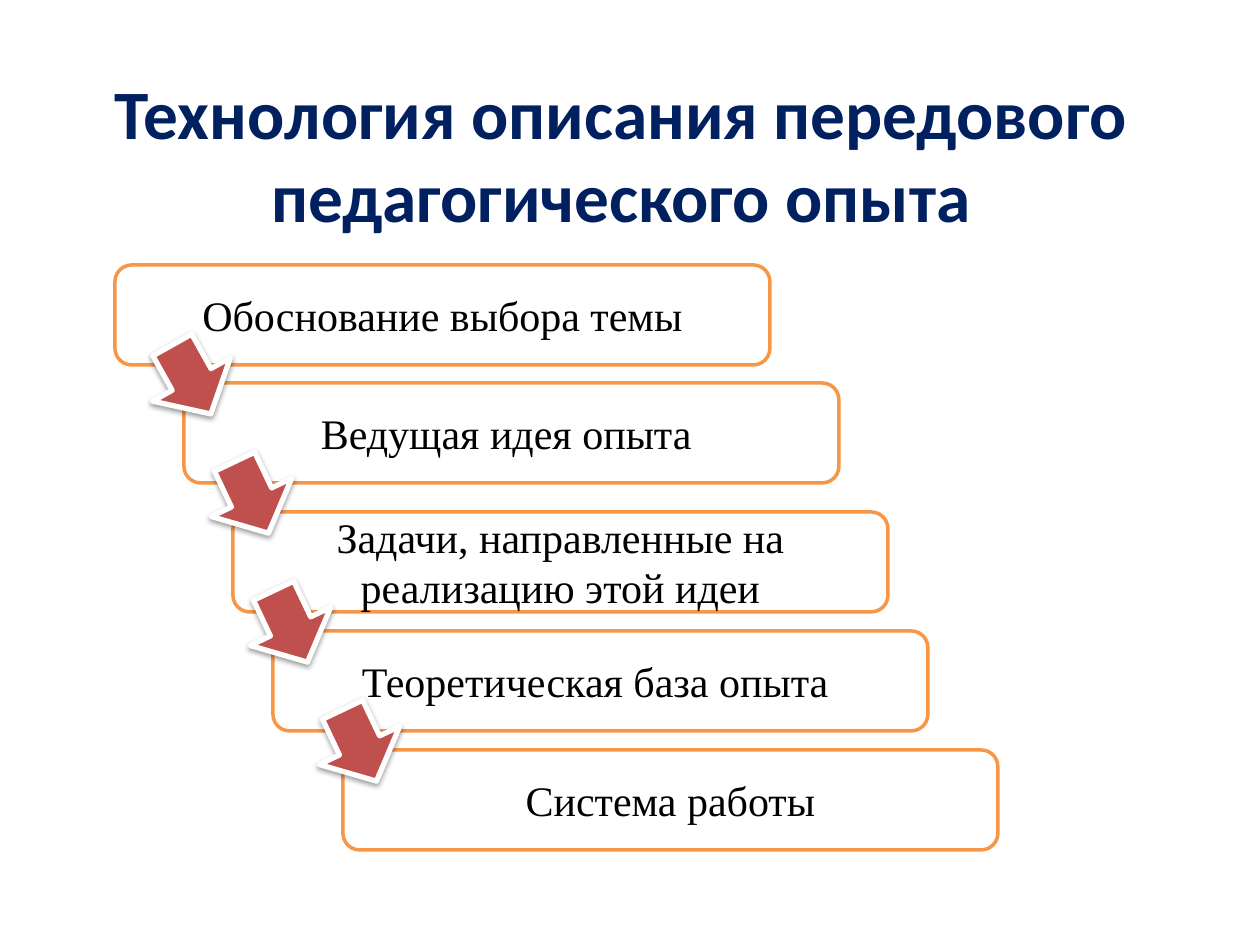
from lxml.etree import SubElement as Sub
from pptx import Presentation
from pptx.dml.color import RGBColor
from pptx.enum.shapes import MSO_SHAPE as Kind
from pptx.enum.text import MSO_ANCHOR as Anchor, MSO_AUTO_SIZE as Fit, PP_ALIGN as Align
from pptx.oxml.ns import qn
from pptx.util import Pt

PX = 914400 // 126
NAVY = RGBColor(0x00, 0x20, 0x60)
ORANGE = RGBColor(0xF7, 0x96, 0x46)
RED = RGBColor(0xC0, 0x50, 0x4D)
WHITE = RGBColor(0xFF, 0xFF, 0xFF)
BLACK = RGBColor(0x00, 0x00, 0x00)

HEAD = "Технология описания передового педагогического опыта"
HEAD_FONT = {"name": "Calibri", "size": Pt(39.6), "bold": True}
STEP_FONT = {"name": "Times New Roman", "size": Pt(24), "bold": False}
STEPS = [
    ("Обоснование выбора темы", 115, 265),
    ("Ведущая идея опыта ", 184, 383),
    ("Задачи, направленные на реализацию этой идеи", 233, 512),
    ("Теоретическая база опыта ", 273, 631),
    ("Система работы", 343, 750),
]
STEP_SIZE = 655, 100
ARROW_SIZE = 79, 89
ARROW_DROP = 70
ARROWS = [(152, 60.8), (212, 64.6), (251, 64.6), (320, 64.6)]


def scale(*sizes):
    return [size * PX for size in sizes]


def write(shape, text, style, color):
    frame = shape.text_frame
    frame.word_wrap = True
    frame.auto_size = Fit.NONE
    frame.vertical_anchor = Anchor.MIDDLE
    para = frame.paragraphs[0]
    para.alignment = Align.CENTER
    run = para.add_run()
    run.text = text
    for key, value in style.items():
        setattr(run.font, key, value)
    run.font.color.rgb = color


def add_title(slide):
    title = slide.shapes.title
    title.left, title.top, title.width, title.height = scale(54, 116, 1134, 157)
    write(title, HEAD, HEAD_FONT, NAVY)
    title.text_frame.margin_bottom = 89 * PX


def add_block(slide, kind, box, fill, line, width):
    shape = slide.shapes.add_shape(kind, *scale(*box))
    shape.shadow.inherit = False
    shape.fill.solid()
    shape.fill.fore_color.rgb = fill
    shape.line.color.rgb = line
    shape.line.width = Pt(width)
    return shape


def add_step(slide, text, left, top):
    box = (left, top, *STEP_SIZE)
    step = add_block(slide, Kind.ROUNDED_RECTANGLE, box, WHITE, ORANGE, 2)
    write(step, text, STEP_FONT, BLACK)


def add_shade(shape):
    effects = shape._element.spPr.find(qn("a:effectLst"))
    shade = Sub(effects, qn("a:outerShdw"), blurRad=str(Pt(3.1)),
                dist=str(Pt(1.6)), dir="5400000", rotWithShape="0")
    color = Sub(shade, qn("a:srgbClr"), val=str(BLACK))
    Sub(color, qn("a:alpha"), val="38000")


def add_arrow(slide, left, top, angle):
    box = (left, top, *ARROW_SIZE)
    arrow = add_block(slide, Kind.RIGHT_ARROW, box, RED, WHITE, 3)
    arrow.rotation = angle
    add_shade(arrow)


def main():
    deck = Presentation()
    deck.slide_width, deck.slide_height = scale(1260, 945)
    slide = deck.slides.add_slide(deck.slide_layouts[5])
    add_title(slide)
    for text, left, top in STEPS:
        add_step(slide, text, left, top)
    for (_, _, top), (left, angle) in zip(STEPS, ARROWS):
        add_arrow(slide, left, top + ARROW_DROP, angle)
    deck.save("out.pptx")


if __name__ == "__main__":
    main()
